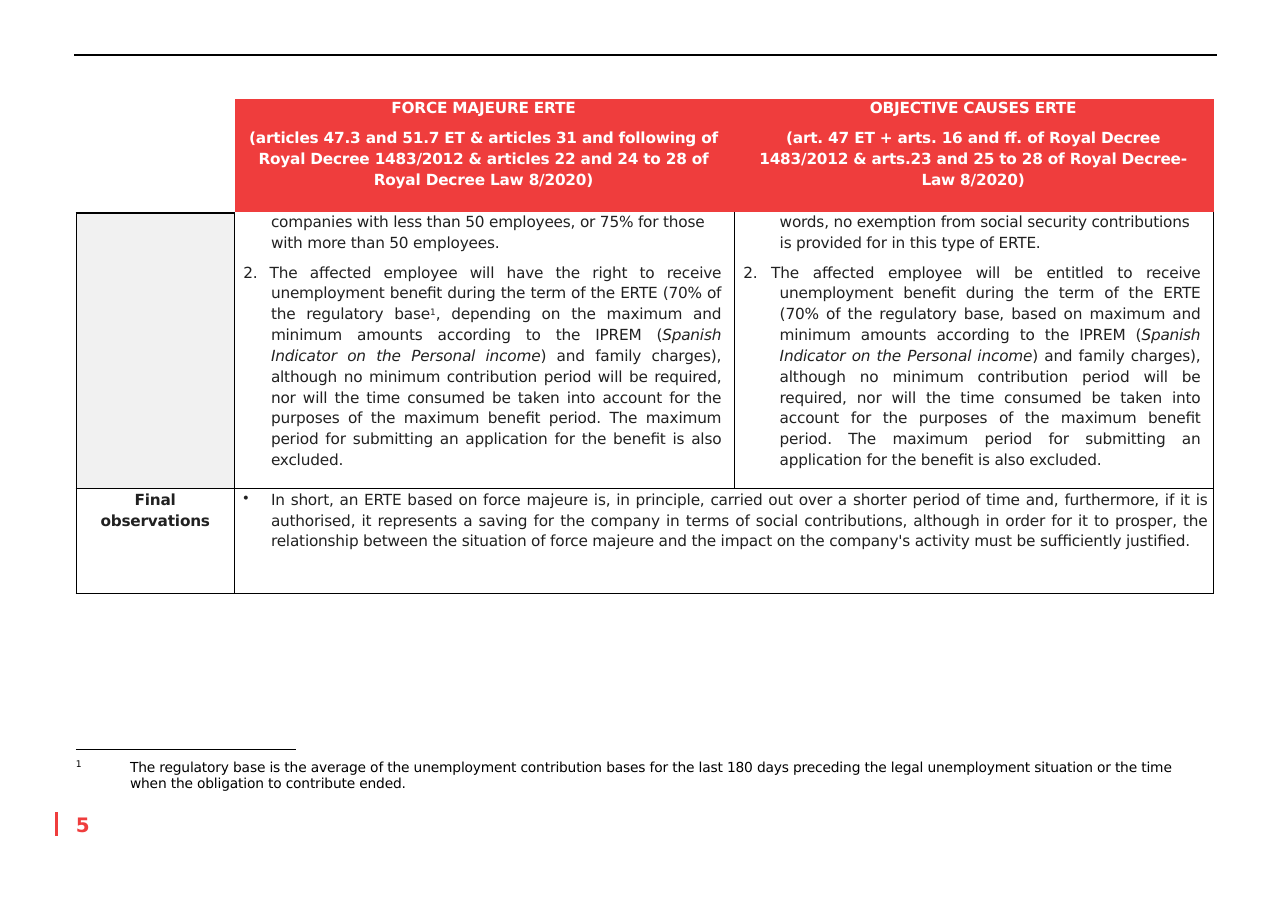
"""Builds a page comparing two kinds of ERTE, with a footnote."""
from lxml import etree
from pptx import Presentation
from pptx import util as u
from pptx.dml import color
from pptx.enum import shapes, text
from pptx.oxml import ns

RED, BLACK, WHITE, INK, GREY = "EF3D3D", "000000", "FFFFFF", "212121", "F1F1F1"
CENTER, JUSTIFY, LEFT = text.PP_ALIGN.CENTER, text.PP_ALIGN.JUSTIFY, text.PP_ALIGN.LEFT


def rgb(value):
    """Turn a hex string into a colour."""
    return color.RGBColor.from_string(value)


def write(frame, pieces, first=False, hue=INK, size=10, bold=False, align=JUSTIFY,
          before=0, spacing=1.0, margin=0, hang=0, bullet=None):
    """Add one paragraph, made of a string or of (string, style) pairs."""
    para = frame.paragraphs[0] if first else frame.add_paragraph()
    para.alignment, para.line_spacing, para.space_before = align, spacing, u.Pt(before)
    layout = para._p.get_or_add_pPr()
    layout.set("marL", str(u.Cm(margin)))
    layout.set("indent", str(-u.Cm(hang)))
    if bullet:
        etree.SubElement(layout, ns.qn("a:buChar")).set("char", bullet)
    for words, style in [(pieces, "")] if isinstance(pieces, str) else pieces:
        span = para.add_run()
        span.text = words
        font = span.font
        font.name, font.size, font.bold = "DejaVu Sans", u.Pt(size), bold
        font.italic = style == "italic"
        font.color.rgb = rgb(hue)
        span._r.rPr.set("spc", "-10")
        if style == "super":
            span._r.rPr.set("baseline", "30000")


class Sheet:
    """Holds the current page and its shared style."""

    def __init__(self, page):
        """Keep the page to draw on."""
        self.page = page

    def line(self, x1, y1, x2, y2, hue=BLACK, width=1.5):
        """Draw a straight rule."""
        rule = self.page.shapes.add_connector(
            shapes.MSO_CONNECTOR.STRAIGHT, u.Cm(x1), u.Cm(y1), u.Cm(x2), u.Cm(y2))
        rule.line.color.rgb = rgb(hue)
        rule.line.width = u.Pt(width)
        etree.SubElement(rule._element.spPr, ns.qn("a:effectLst"))

    def label(self, x, y, width, height, words, **style):
        """Place a text box without side margins."""
        box = self.page.shapes.add_textbox(u.Cm(x), u.Cm(y), u.Cm(width), u.Cm(height))
        frame = box.text_frame
        frame.word_wrap = True
        frame.margin_left = frame.margin_right = frame.margin_bottom = 0
        frame.margin_top = u.Cm(0.03)
        write(frame, words, first=True, align=LEFT, before=1, **style)

    def table(self, x, y, widths, heights):
        """Add a plain table."""
        frame = self.page.shapes.add_table(
            len(heights), len(widths), u.Cm(x), u.Cm(y), u.Cm(sum(widths)), u.Cm(sum(heights)))
        table = frame.table
        table.first_row = table.horz_banding = False
        for column, width in zip(table.columns, widths):
            column.width = u.Cm(width)
        for row, height in zip(table.rows, heights):
            row.height = u.Cm(height)
        return table

    def cell(self, cell, paras=(), fill=None, left=0, right=0, **borders):
        """Fill a cell; borders map a side letter to colour and width."""
        cell.margin_left, cell.margin_right = u.Cm(left), u.Cm(right)
        cell.margin_top = cell.margin_bottom = 0
        props = cell._tc.get_or_add_tcPr()
        for side in "LRTB":
            hue, width = borders.get(side, (None, 0))
            edge = etree.SubElement(props, ns.qn(f"a:ln{side}"), w=str(u.Pt(width)))
            if hue:
                paint = etree.SubElement(edge, ns.qn("a:solidFill"))
                etree.SubElement(paint, ns.qn("a:srgbClr"), val=hue)
            else:
                etree.SubElement(edge, ns.qn("a:noFill"))
        if fill:
            cell.fill.solid()
            cell.fill.fore_color.rgb = rgb(fill)
        else:
            cell.fill.background()
        for index, (words, style) in enumerate(paras):
            write(cell.text_frame, words, first=index == 0, **style)


HEADERS = [
    ("FORCE MAJEURE ERTE",
     "(articles 47.3 and 51.7 ET & articles 31 and following of Royal Decree 1483/2012 "
     "& articles 22 and 24 to 28 of Royal Decree Law 8/2020)", 0.2, 0.25),
    ("OBJECTIVE CAUSES ERTE",
     "(art. 47 ET + arts. 16 and ff. of Royal Decree 1483/2012 & arts.23 and 25 to 28 "
     "of Royal Decree-Law 8/2020)", 0.4, 0.45),
]
INDICATOR = ("Spanish Indicator on the Personal income", "italic")
BENEFITS = [
    ("companies with less than 50 employees, or 75% for those",
     "with more than 50 employees.",
     [("2. The affected employee will have the right to receive unemployment benefit during "
       "the term of the ERTE (70% of the regulatory base", ""), ("1", "super"),
      (", depending on the maximum and minimum amounts according to the IPREM (", ""), INDICATOR,
      (") and family charges), although no minimum contribution period will be required, nor "
       "will the time consumed be taken into account for the purposes of the maximum benefit "
       "period. The maximum period for submitting an application for the benefit is also "
       "excluded.", "")], 0.84, 0.64),
    ("words, no exemption from social security contributions",
     "is provided for in this type of ERTE.",
     [("2. The affected employee will be entitled to receive unemployment benefit during the "
       "term of the ERTE (70% of the regulatory base, based on maximum and minimum amounts "
       "according to the IPREM (", ""), INDICATOR,
      (") and family charges), although no minimum contribution period will be required, nor "
       "will the time consumed be taken into account for the purposes of the maximum benefit "
       "period. The maximum period for submitting an application for the benefit is also "
       "excluded.", "")], 1.04, 0.84),
]
OBSERVATION = (
    "In short, an ERTE based on force majeure is, in principle, carried out over a shorter "
    "period of time and, furthermore, if it is authorised, it represents a saving for the "
    "company in terms of social contributions, although in order for it to prosper, the "
    "relationship between the situation of force majeure and the impact on the company's "
    "activity must be sufficiently justified.")
FOOTNOTE = (
    "The regulatory base is the average of the unemployment contribution bases for the last "
    "180 days preceding the legal unemployment situation or the time when the obligation to "
    "contribute ended.")


def comparison(sheet):
    """Draw the comparison table."""
    table = sheet.table(1.75, 2.29, [3.66, 11.53, 11.05], [2.62, 6.35, 2.42])
    thin, white, thick = (BLACK, 0.5), (WHITE, 1), (BLACK, 1)
    frame = dict.fromkeys("LRTB", thin)
    sheet.cell(table.cell(0, 0), B=thick)
    sheet.cell(table.cell(1, 0), fill=GREY, **{**frame, "T": thick})
    for column, (title, articles, left, right) in enumerate(HEADERS, 1):
        style = dict(hue=WHITE, bold=True, align=CENTER, before=6)
        sheet.cell(table.cell(0, column), [(title, style), (articles, {**style, "spacing": 1.17})],
                   fill=RED, left=left, right=right, B=white)
    for column, (start, end, benefit, margin, hang) in enumerate(BENEFITS, 1):
        paras = [(start, dict(margin=margin, before=0.1)),
                 (end, dict(margin=margin, before=2)),
                 (benefit, dict(margin=margin, hang=hang, before=6, spacing=1.17))]
        sheet.cell(table.cell(1, column), paras, right=0.31, **{**frame, "T": white})
    closing = dict(before=4.4, spacing=1.16)
    sheet.cell(table.cell(2, 0), [("Final observations", dict(closing, bold=True, align=CENTER))],
               left=0.25, right=0.25, **frame)
    table.cell(2, 1).merge(table.cell(2, 2))
    sheet.cell(table.cell(2, 1), [(OBSERVATION, dict(closing, margin=0.84, hang=0.64, bullet="•"))],
               right=0.15, **frame)
    sheet.cell(table.cell(2, 2), **frame)


def main():
    """Build and save the deck."""
    deck = Presentation()
    deck.slide_width, deck.slide_height = u.Cm(29.7), u.Cm(21)
    sheet = Sheet(deck.slides.add_slide(deck.slide_layouts[6]))
    sheet.line(1.71, 1.27, 28.07, 1.27)
    comparison(sheet)
    sheet.line(1.75, 17.28, 6.83, 17.28, width=0.75)
    sheet.label(1.75, 17.45, 0.3, 0.33, "1", hue=BLACK, size=6)
    sheet.label(3, 17.45, 24.9, 0.84, FOOTNOTE, hue=BLACK, size=9)
    sheet.line(1.3, 18.72, 1.3, 19.28, hue=RED)
    sheet.label(1.75, 18.69, 0.6, 0.58, "5", hue=RED, size=13, bold=True)
    deck.save("out.pptx")


if __name__ == "__main__":
    main()
